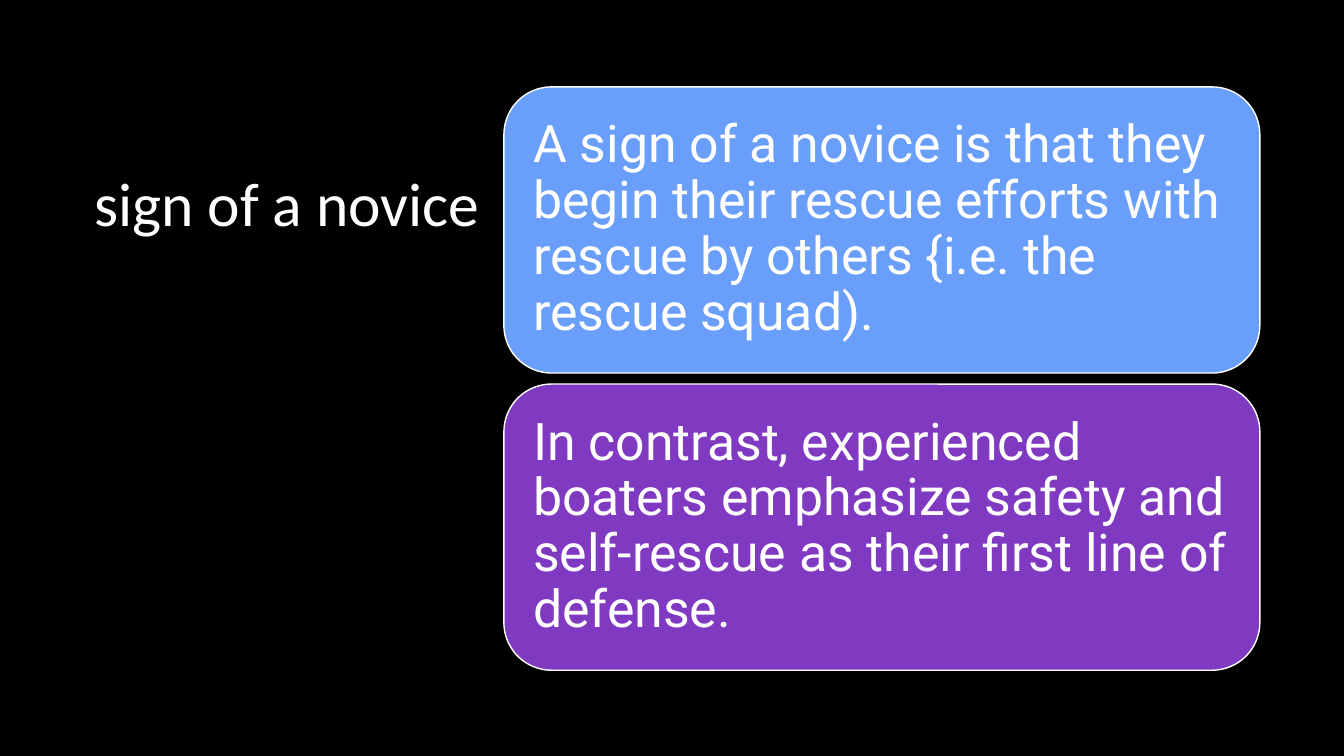
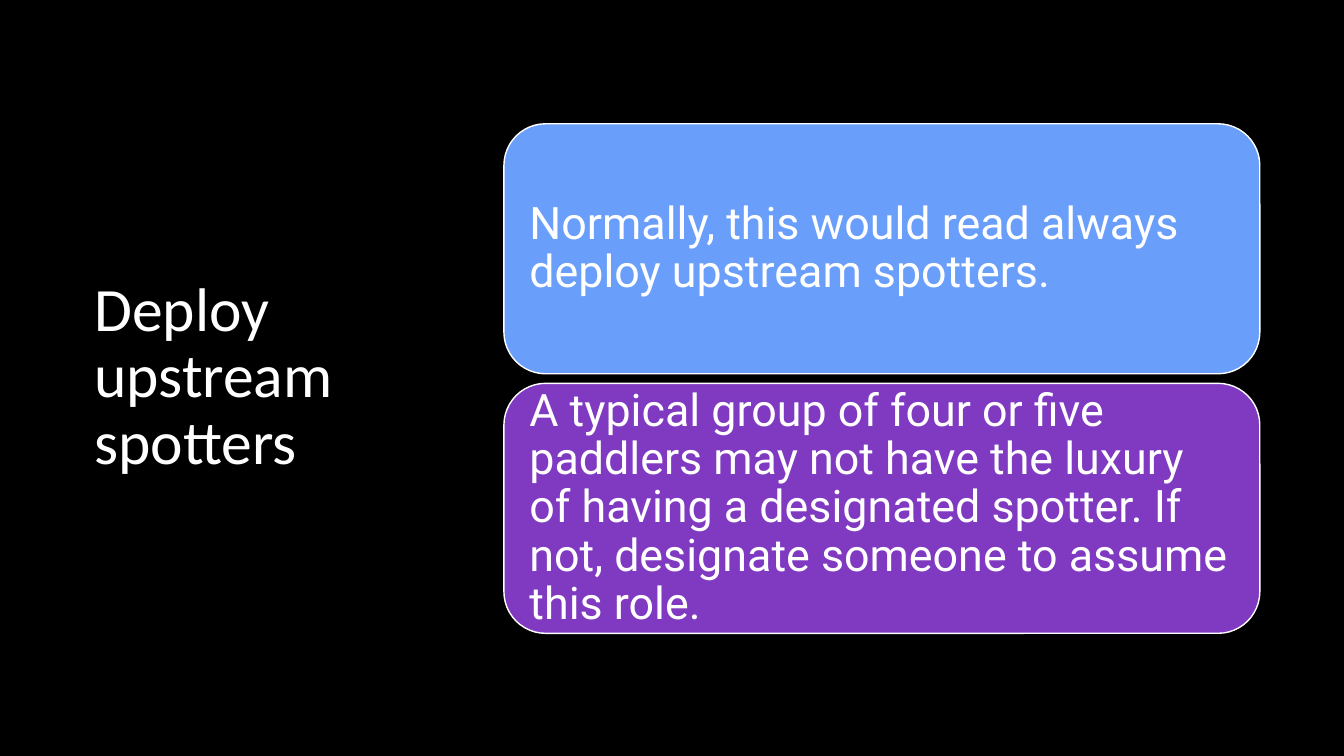
from dataclasses import dataclass

from pptx import Presentation
from pptx.dml.color import RGBColor
from pptx.enum.shapes import MSO_SHAPE as Preset
from pptx.enum.text import MSO_ANCHOR as Anchor, MSO_AUTO_SIZE as AutoSize, PP_ALIGN as Align
from pptx.util import Cm, Pt

# Content
SLIDES = [
    {
        "title": "sign of a novice",
        "title_anchor": Anchor.TOP,
        "card_height": 7.21,
        "card_size": 37,
        "cards": [
            "A sign of a novice is that they begin their rescue efforts with "
            "rescue by others {i.e. the rescue squad).",
            "In contrast, experienced boaters emphasize safety and "
            "self-rescue as their first line of defense.",
        ],
    },
    {
        "title": "Deploy upstream spotters",
        "title_anchor": Anchor.MIDDLE,
        "card_height": 6.3,
        "card_size": 32,
        "cards": [
            "Normally, this would read always deploy upstream spotters.",
            "A typical group of four or five paddlers may not have the luxury "
            "of having a designated spotter. If not, designate someone to "
            "assume this role.",
        ],
    },
]


@dataclass(frozen=True)
class Theme:
    background: RGBColor = RGBColor(0x00, 0x00, 0x00)
    text: RGBColor = RGBColor(0xFF, 0xFF, 0xFF)
    cards: tuple = (RGBColor(0x69, 0x9E, 0xFA), RGBColor(0x80, 0x39, 0xC1))
    title_font: str = "Calibri"
    card_font: str = "Roboto"
    title_size: int = 44
    outline: int = 1
    line_spacing: float = 0.9


THEME = Theme()

# Layout in centimetres; card gap and inset grow with the type size
SLIDE_SIZE = (33.87, 19.05)
TITLE_BOX = {"left": 2.12, "top": 4.24, "width": 10.59, "height": 10.57}
CARD_LEFT, CARD_WIDTH = 12.7, 19.05
STACK_MIDDLE = 9.54
GAP_PER_POINT = 0.0075
INSET_PER_POINT = 0.0105


def set_attributes(target, values):
    for name, value in values.items():
        setattr(target, name, value)


def write(frame, text, font, size, anchor):
    frame.text = text
    set_attributes(frame, {"word_wrap": True, "auto_size": AutoSize.NONE,
                           "vertical_anchor": anchor})
    paragraph = frame.paragraphs[0]
    set_attributes(paragraph, {"alignment": Align.LEFT,
                               "line_spacing": THEME.line_spacing})
    run_font = paragraph.runs[0].font
    set_attributes(run_font, {"name": font, "size": Pt(size)})
    run_font.color.rgb = THEME.text


def add_card(slide, text, color, top, height, size):
    card = slide.shapes.add_shape(
        Preset.ROUNDED_RECTANGLE,
        Cm(CARD_LEFT), Cm(top), Cm(CARD_WIDTH), Cm(height))
    card.shadow.inherit = False
    card.fill.solid()
    card.fill.fore_color.rgb = color
    card.line.color.rgb = THEME.text
    card.line.width = Pt(THEME.outline)
    inset = Cm(size * INSET_PER_POINT)
    set_attributes(card.text_frame, {f"margin_{side}": inset for side in
                                     ("left", "top", "right", "bottom")})
    write(card.text_frame, text, THEME.card_font, size, Anchor.MIDDLE)


def add_slide(deck, layout, content):
    slide = deck.slides.add_slide(layout)
    title = slide.shapes.title
    set_attributes(title, {side: Cm(value) for side, value in TITLE_BOX.items()})
    write(title.text_frame, content["title"], THEME.title_font,
          THEME.title_size, content["title_anchor"])

    # Equal cards stacked around a common middle line
    cards, height, size = content["cards"], content["card_height"], content["card_size"]
    step = height + size * GAP_PER_POINT
    first_middle = STACK_MIDDLE - step * (len(cards) - 1) / 2
    for row, (text, color) in enumerate(zip(cards, THEME.cards)):
        top = first_middle + row * step - height / 2
        add_card(slide, text, color, top, height, size)


def main():
    deck = Presentation()
    deck.slide_width, deck.slide_height = map(Cm, SLIDE_SIZE)
    backdrop = deck.slide_master.background.fill
    backdrop.solid()
    backdrop.fore_color.rgb = THEME.background
    title_only = deck.slide_layouts.get_by_name("Title Only")
    for content in SLIDES:
        add_slide(deck, title_only, content)
    deck.save("out.pptx")


if __name__ == "__main__":
    main()
